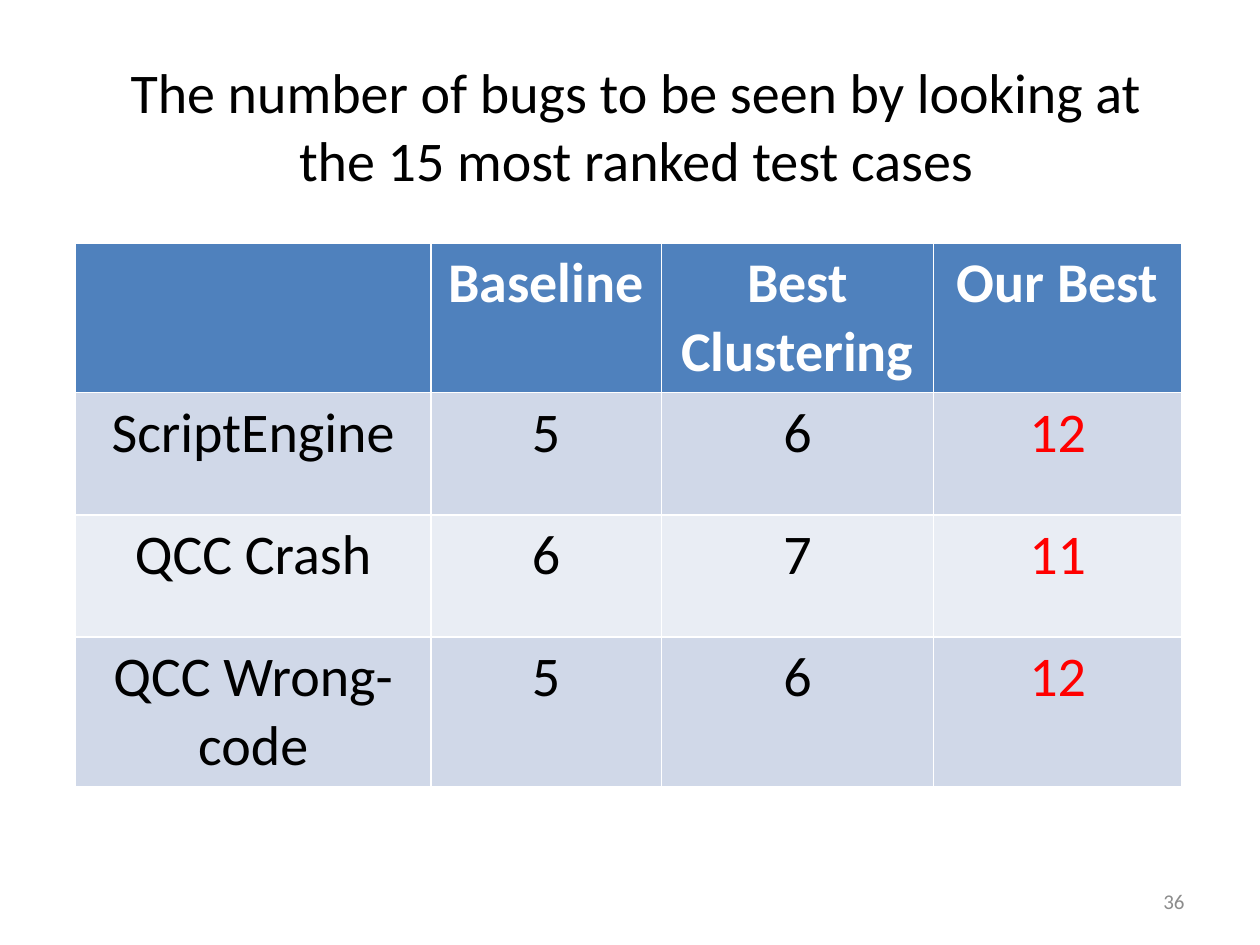
from pptx import Presentation
from pptx.dml.color import RGBColor
from pptx.enum.text import MSO_ANCHOR, PP_ALIGN
from pptx.util import Inches, Pt

TITLE = "The number of bugs to be seen by looking at the 15 most ranked test cases"
PAGE = "36"
BUG_COUNTS = [
    ("", "Baseline", "Best Clustering", "Our Best"),
    ("ScriptEngine", "5", "6", "12"),
    ("QCC Crash", "6", "7", "11"),
    ("QCC Wrong-code", "5", "6", "12"),
]
LEFT = 0.6
COLUMN_WIDTHS = (2.82, 1.83, 2.16, 1.97)
ROW_HEIGHT = 0.97
HEADER_FILL = "4F81BD"
BAND_FILLS = ("E9EDF4", "D0D8E8")
BODY = {"name": "Calibri", "size": Pt(32), "bold": False}
HEADER = {**BODY, "bold": True}
FOOTER = {**BODY, "size": Pt(12)}


def color(value):
    return RGBColor.from_string(value)


def write(frame, text, font, ink, align=PP_ALIGN.CENTER):
    paragraph = frame.paragraphs[0]
    paragraph.text = text
    paragraph.alignment = align
    for key, value in font.items():
        setattr(paragraph.font, key, value)
    paragraph.font.color.rgb = color(ink)


def place(box, left, top, width, height, anchor):
    box.left, box.top, box.width, box.height = map(Inches, (left, top, width, height))
    box.text_frame.word_wrap = True
    box.text_frame.vertical_anchor = anchor


def cell_style(row, column):
    if row == 0:
        return HEADER, "FFFFFF", HEADER_FILL
    ink = "FF0000" if column == len(COLUMN_WIDTHS) - 1 else "000000"
    return BODY, ink, BAND_FILLS[row % 2]


deck = Presentation()
deck.slide_width, deck.slide_height = Inches(10), Inches(7.5)
slide = deck.slides.add_slide(deck.slide_layouts[5])

title = slide.shapes.title
place(title, LEFT, 0.41, 8.9, 1.18, MSO_ANCHOR.TOP)
write(title.text_frame, TITLE, BODY, "000000")

results = slide.shapes.add_table(
    len(BUG_COUNTS), len(COLUMN_WIDTHS), Inches(LEFT), Inches(1.93),
    Inches(sum(COLUMN_WIDTHS)), Inches(ROW_HEIGHT * len(BUG_COUNTS)),
).table
for column, width in zip(results.columns, COLUMN_WIDTHS):
    column.width = Inches(width)
for row, entries in enumerate(BUG_COUNTS):
    results.rows[row].height = Inches(ROW_HEIGHT)
    for column, entry in enumerate(entries):
        font, ink, fill = cell_style(row, column)
        cell = results.cell(row, column)
        cell.fill.solid()
        cell.fill.fore_color.rgb = color(fill)
        write(cell.text_frame, entry, font, ink)

page_number = slide.shapes.add_textbox(0, 0, 0, 0)
place(page_number, 7.17, 6.95, 2.33, 0.4, MSO_ANCHOR.MIDDLE)
write(page_number.text_frame, PAGE, FOOTER, "8C8C8C", PP_ALIGN.RIGHT)

deck.save("out.pptx")
